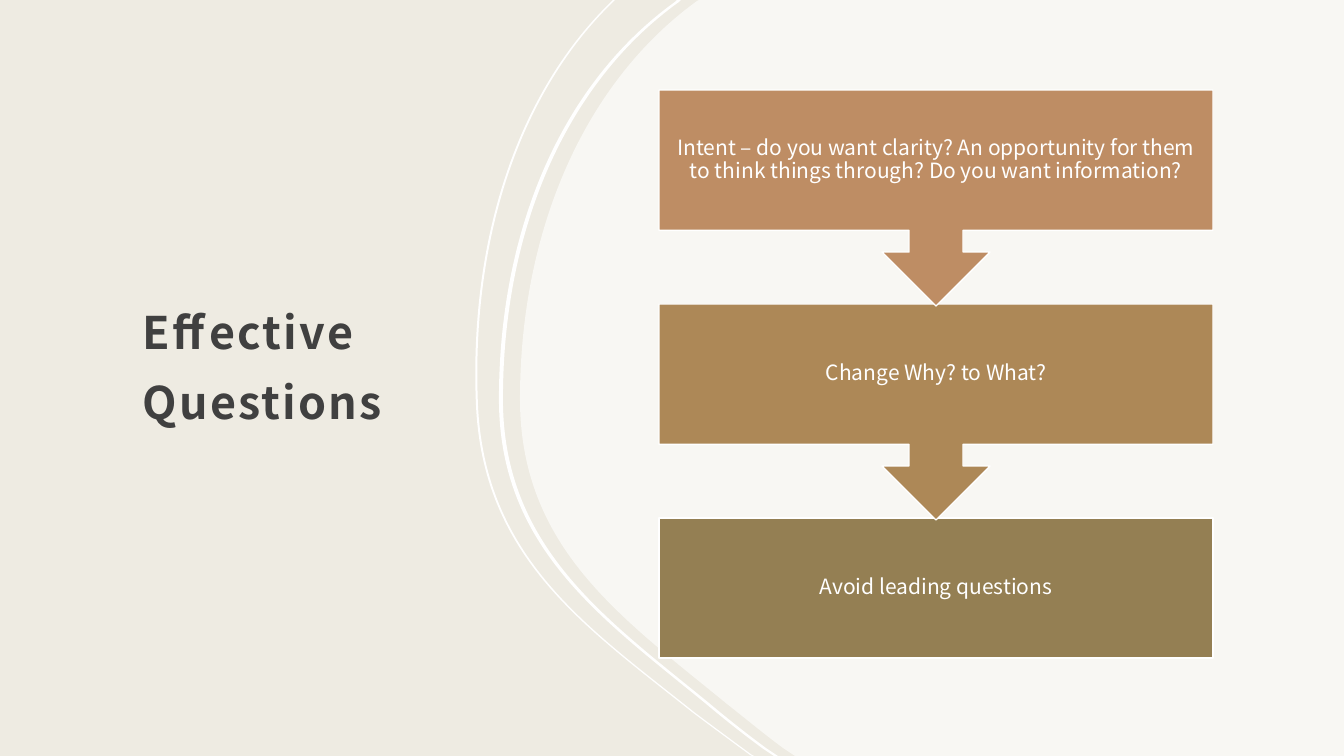
import pptx
import pptx.util
import pptx.dml.color
import pptx.enum.shapes
import pptx.enum.text
import pptx.oxml.ns
from lxml import etree

# Content
TITLE = "Effective Questions"
STEPS = [
    ("Intent – do you want clarity? An opportunity for them to think things "
     "through? Do you want information?", "clay"),
    ("Change Why? to What?", "gold"),
    ("Avoid leading questions", "olive"),
]
HEX = {"sand": "EEEBE2", "white": "FFFFFF", "ink": "404040",
       "clay": "BE8D64", "gold": "AD8857", "olive": "947F53"}
FONT = "Noto Sans CJK JP"

# Each edge is a list of spans: one point for a line, three for a curve
PANEL = [[(699, 0)], [(697, 1)],
         [(584, 83), (520, 231), (520, 399)],
         [(520, 548), (622, 618), (727, 704)],
         [(746, 719), (764, 734), (783, 748)], [(795, 756)]]
THIN = [[(613, 0)], [(610, 3)],
        [(516, 95), (469, 242), (476, 405)],
        [(483, 559), (587, 628), (692, 712)],
        [(712, 727), (731, 741), (750, 755)], [(752, 756)]]
THICK = [[(677, 0)], [(675, 2)],
         [(561, 84), (499, 231), (499, 399)],
         [(499, 547), (601, 618), (705, 703)],
         [(724, 719), (743, 734), (762, 748)], [(774, 756)]]

# Layout in px
WIDE, HIGH = 1344, 756
SCALE = 12192000 / WIDE
LEFT, TOP, BOX_W, BOX_H = 659, 90, 554, 140
STEP, CALL_H = 214, 216
PAD = 12
QN = pptx.oxml.ns.qn


def emu(px):
    return round(px * SCALE)


def color(name):
    return pptx.dml.color.RGBColor.from_string(HEX[name])


def paint(shape, name):
    shape.shadow.inherit = False
    shape.fill.solid()
    shape.fill.fore_color.rgb = color(name)


def ribbon(edge, width):
    """Close an edge with the same edge, moved right and run backwards."""
    pts = [(x + width, y) for span in edge for x, y in span][::-1]
    back = [[pts.pop(0)]]
    for span in reversed(edge[1:]):
        back.append([pts.pop(0) for _ in span])
    return edge + back


def outline(shapes, spans):
    ends = [(emu(x), emu(y)) for x, y in (span[-1] for span in spans)]
    pen = shapes.build_freeform(*ends[0], scale=1.0)
    pen.add_line_segments(ends[1:], close=True)
    shape = pen.convert_to_shape()
    paint(shape, "white")
    shape.line.fill.background()
    # Bend the spans that have three points
    nodes = list(shape._element.iter(QN("a:path")))[0]
    for node, span in zip(list(nodes), spans):
        if len(span) == 3:
            curve = etree.Element(QN("a:cubicBezTo"))
            for x, y in span:
                etree.SubElement(curve, QN("a:pt"), x=str(emu(x) - shape.left),
                                 y=str(emu(y) - shape.top))
            nodes.replace(node, curve)
    return shape


def write(shapes, box, text, size, tone):
    frame = shapes.add_textbox(*map(emu, box)).text_frame
    frame.word_wrap = True
    frame.vertical_anchor = pptx.enum.text.MSO_ANCHOR.MIDDLE
    frame.margin_left = frame.margin_right = emu(PAD)
    frame.margin_top = frame.margin_bottom = emu(PAD)
    para = frame.paragraphs[0]
    para.add_run().text = text
    para.font.name = FONT
    para.font.size = pptx.util.Pt(size)
    para.font.color.rgb = color(tone)
    return para


def main():
    deck = pptx.Presentation()
    deck.slide_width, deck.slide_height = emu(WIDE), emu(HIGH)
    slide = deck.slides.add_slide(deck.slide_layouts[6])
    slide.background.fill.solid()
    slide.background.fill.fore_color.rgb = color("sand")

    # Title
    para = write(slide.shapes, (131, 123, 333, 472), TITLE, 32, "ink")
    para.font.bold = True
    para.line_spacing = 1.3
    para.runs[0]._r.get_or_add_rPr().set("spc", "150")

    # Pale panel, 60% opaque, and white ribbons
    waves = slide.shapes.add_group_shape().shapes
    panel = outline(waves, PANEL + [[(WIDE, HIGH)], [(WIDE, 0)]])
    tint = next(panel._element.iter(QN("a:srgbClr")))
    etree.SubElement(tint, QN("a:alpha"), val="60000")
    for edge, width in ((THIN, 2), (THICK, 4)):
        outline(waves, ribbon(edge, width))

    # Steps, last one at the back
    flow = slide.shapes.add_group_shape().shapes
    kinds = pptx.enum.shapes.MSO_SHAPE
    for i, (text, tone) in reversed(list(enumerate(STEPS))):
        top = TOP + i * STEP
        last = i == len(STEPS) - 1
        kind = kinds.RECTANGLE if last else kinds.UP_ARROW_CALLOUT
        high = BOX_H if last else CALL_H
        shape = flow.add_shape(kind, *map(emu, (LEFT, top, BOX_W, high)))
        shape.rotation = 0 if last else 180
        paint(shape, tone)
        shape.line.color.rgb = color("white")
        shape.line.width = pptx.util.Pt(1)
        para = write(flow, (LEFT, top, BOX_W, BOX_H), text, 15, "white")
        para.alignment = pptx.enum.text.PP_ALIGN.CENTER
        para.line_spacing = 0.9

    deck.save("out.pptx")


if __name__ == "__main__":
    main()
